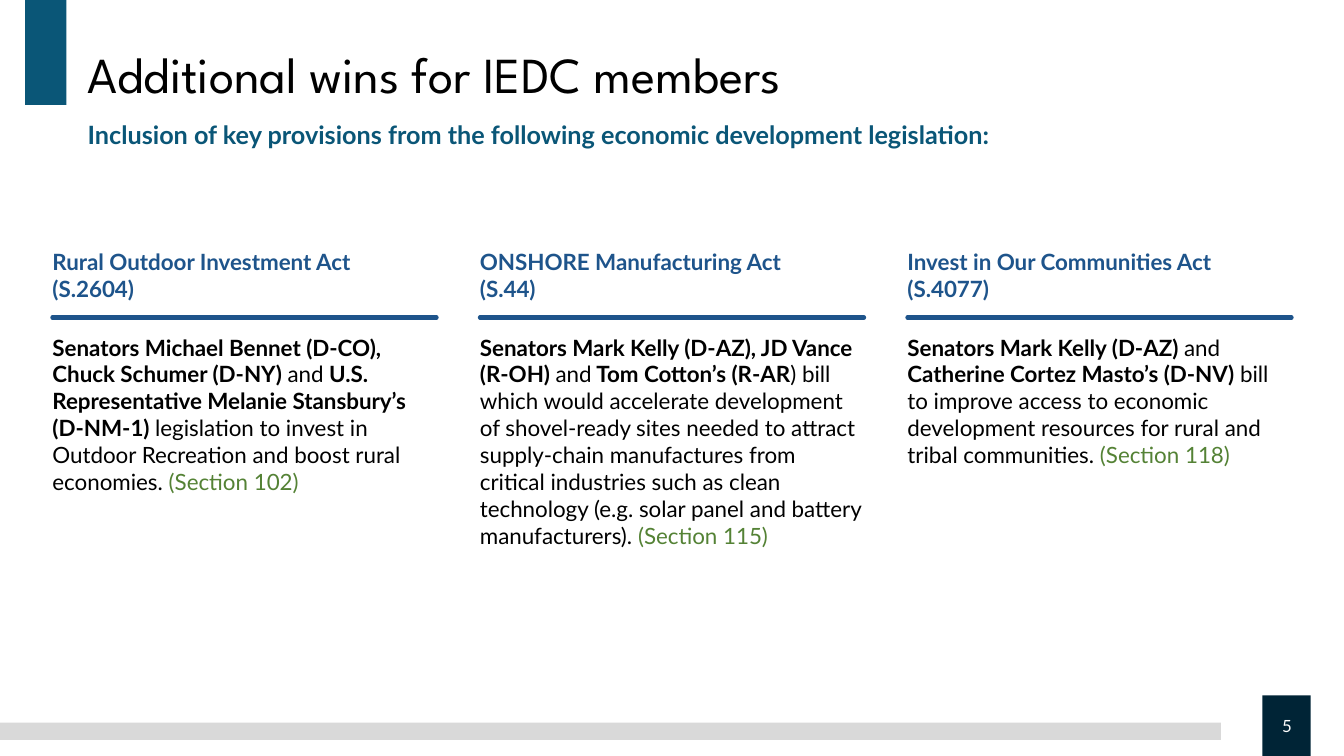
from lxml import etree
from pptx import Presentation
from pptx import util as u
from pptx.dml.color import RGBColor
from pptx.enum import shapes, text
from pptx.oxml import ns

HUES = {
    "black": "000000",
    "white": "FFFFFF",
    "navy": "002436",
    "teal": "0A5677",
    "gray": "D9D9D9",
    "blue": "1E548B",
    "green": "548235",
}

BILLS = [
    (
        ["Rural Outdoor Investment Act (S.2604)"],
        [
            ("Senators Michael Bennet (D-CO), Chuck Schumer (D-NY) ", True),
            ("and", False),
            (" U.S. Representative Melanie Stansbury’s (D-NM-1) ", True),
            ("legislation to invest in Outdoor Recreation and boost rural economies. ", False),
        ],
        "(Section 102)",
    ),
    (
        ["ONSHORE Manufacturing Act ", "(S.44)"],
        [
            ("Senators Mark Kelly (D-AZ), JD Vance (R-OH) ", True),
            ("and", False),
            (" Tom Cotton’s (R-AR", True),
            (") bill which would accelerate development of shovel-ready sites needed "
             "to attract supply-chain manufactures from critical industries such as clean "
             "technology (e.g. solar panel and battery manufacturers). ", False),
        ],
        "(Section 115)",
    ),
    (
        ["Invest in Our Communities Act (S.4077)"],
        [
            ("Senators Mark Kelly (D-AZ) ", True),
            ("and ", False),
            ("Catherine Cortez Masto’s (D-NV) ", True),
            ("bill to improve access to economic development resources "
             "for rural and tribal communities. ", False),
        ],
        "(Section 118)",
    ),
]


def hue(name):
    return RGBColor.from_string(HUES[name])


def inch(*sizes):
    return [u.Inches(size) for size in sizes]


def add_run(para, words, size=16, face="Lato", color="black", bold=False):
    run = para.add_run()
    run.text = words
    run.font.size = u.Pt(size)
    run.font.name = face
    run.font.bold = bold
    run.font.color.rgb = hue(color)


def set_frame(shape, align=text.PP_ALIGN.LEFT, anchor=text.MSO_ANCHOR.TOP):
    frame = shape.text_frame
    frame.word_wrap = True
    frame.auto_size = text.MSO_AUTO_SIZE.NONE
    frame.vertical_anchor = anchor
    frame.margin_left = frame.margin_right = 0
    frame.margin_top = frame.margin_bottom = 0
    para = frame.paragraphs[0]
    para.alignment = align
    para.space_before = u.Pt(0)
    return para


def place(shape, left, top, width, height):
    shape.left, shape.top, shape.width, shape.height = inch(left, top, width, height)


def add_text(slide, box, **form):
    return set_frame(slide.shapes.add_textbox(*inch(*box)), **form)


def add_bar(slide, box, color):
    bar = slide.shapes.add_shape(shapes.MSO_SHAPE.RECTANGLE, *inch(*box))
    bar.shadow.inherit = False
    bar.fill.solid()
    bar.fill.fore_color.rgb = hue(color)
    bar.line.fill.background()
    return bar


def add_rule(slide, left, top, width):
    ends = inch(left, top, left + width, top)
    rule = slide.shapes.add_connector(shapes.MSO_CONNECTOR.STRAIGHT, *ends)
    rule.line.color.rgb = hue("blue")
    rule.line.width = u.Pt(3)
    rule.line._get_or_add_ln().set("cap", "rnd")
    etree.SubElement(rule._element.spPr, ns.qn("a:effectLst"))


def add_head(slide):
    title, body = slide.placeholders
    place(title, 0.87, 0.5, 10.99, 0.55)
    para = set_frame(title)
    para.line_spacing = 0.9
    add_run(para, "Additional wins for IEDC members", size=36, face="League Spartan")

    place(body, 0.87, 1.18, 10.99, 0.3)
    para = set_frame(body)
    props = para._p.get_or_add_pPr()
    props.set("marL", "0")
    props.set("indent", "0")
    etree.SubElement(props, ns.qn("a:buNone"))
    add_run(para, "Inclusion of key provisions from the following economic "
            "development legislation:", size=18, color="teal", bold=True)


def add_bill(slide, left, name, parts, section):
    width = 3.81
    para = add_text(slide, (left, 2.46, width, 0.54))
    for row, words in enumerate(name):
        if row:
            para.add_line_break()
        add_run(para, words, color="blue", bold=True)
    add_rule(slide, left, 3.15, width)
    para = add_text(slide, (left, 3.31, width, 2.42))
    for words, bold in parts:
        add_run(para, words, bold=bold)
    add_run(para, section, color="green")


def main():
    deck = Presentation()
    deck.slide_width, deck.slide_height = inch(13.33, 7.5)
    slide = deck.slides.add_slide(deck.slide_layouts[1])

    add_bar(slide, (0.25, 0, 0.41, 1.04), "teal")
    add_bar(slide, (0, 7.17, 12.11, 0.17), "gray")
    add_bar(slide, (12.52, 6.9, 0.48, 0.6), "navy")
    para = add_text(slide, (12.66, 7.1, 0.21, 0.2),
                    align=text.PP_ALIGN.CENTER, anchor=text.MSO_ANCHOR.MIDDLE)
    add_run(para, "5", size=12, color="white")

    add_head(slide)
    for col, bill in enumerate(BILLS):
        add_bill(slide, 0.52 + col * 4.24, *bill)
    deck.save("out.pptx")


if __name__ == "__main__":
    main()
